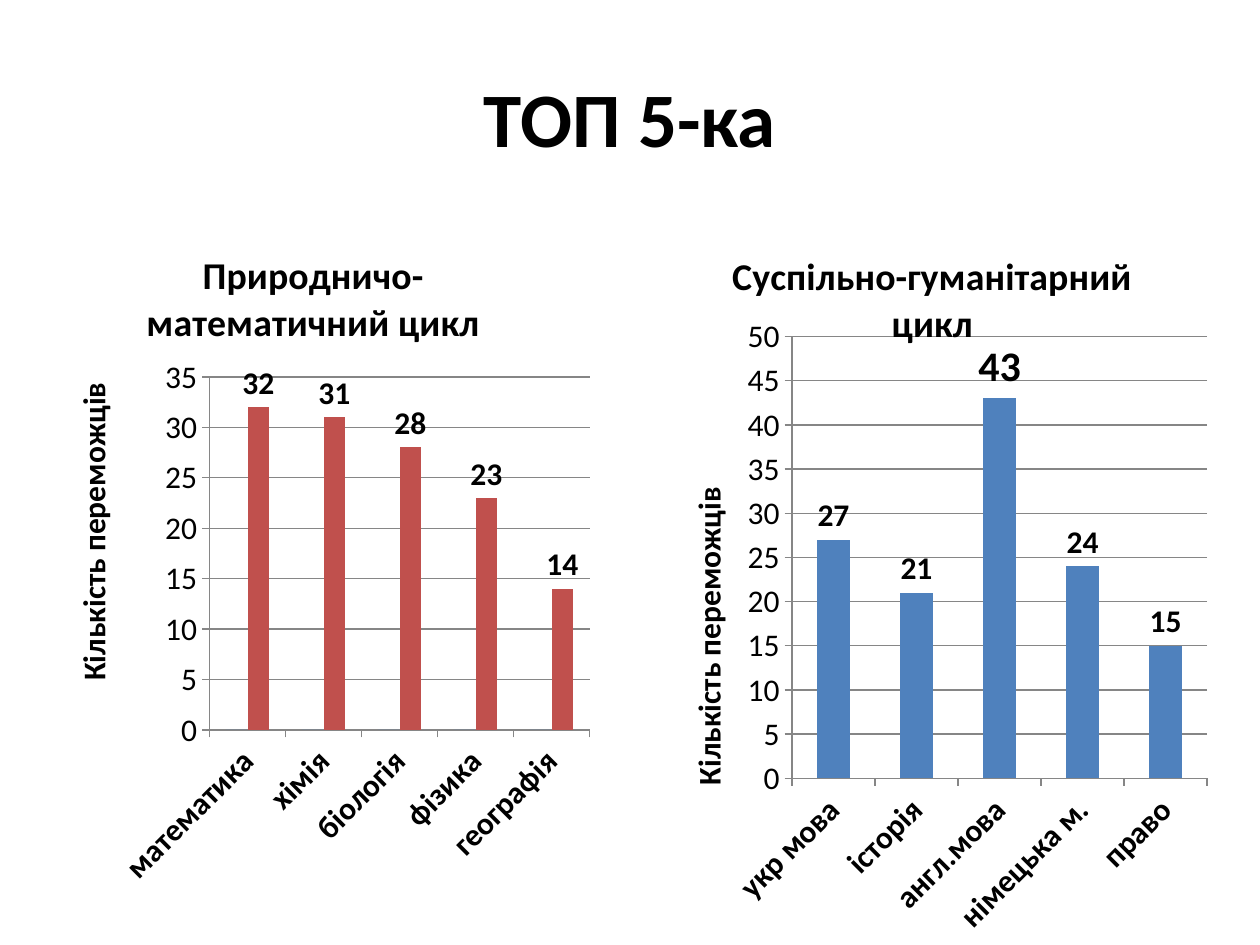
from lxml import etree
from pptx import Presentation
from pptx import util as u
from pptx.chart.data import CategoryChartData
from pptx.dml.color import RGBColor
from pptx.enum import chart as ch, text
from pptx.oxml.ns import qn

TITLE = "ТОП 5-ка"
AXIS_TITLE = "Кількість переможців"
BLUE, RED, BLACK, GREY = "4F81BD", "C0504D", "000000", "868686"
CHARTS = [
    dict(title="Природничо-математичний цикл",
         box=(0.51, 4.45, 11.61, 13.69),
         plot=(0.32, 0.23, 0.66, 0.52), axis_title=(0.07, 0.23),
         cats=["математика", "хімія", "біологія", "фізика", "географія"],
         series=[("Series 1", [0] * 5, BLUE, False),
                 ("Series 2", [32, 31, 28, 23, 14], RED, True)],
         big={}),
    dict(title="Суспільно-гуманітарний цикл",
         box=(12.9, 4.45, 11.79, 14.6),
         plot=(0.26, 0.16, 0.71, 0.61), axis_title=(0.07, 0.36),
         cats=["укр мова", "історія", "англ.мова", "німецька м.", "право"],
         series=[("Series 1", [27, 21, 43, 24, 15], BLUE, True)],
         big={2: 24}),
]


def rgb(code):
    return RGBColor.from_string(code)


def style(font, size, bold=True):
    for name, value in dict(name="Calibri", size=u.Pt(size), bold=bold).items():
        setattr(font, name, value)
    font.color.rgb = rgb(BLACK)


def write(frame, words, size):
    frame.text = words
    style(frame.paragraphs[0].runs[0].font, size)


def place(parent, values, inner=False):
    layout = parent.find(qn("c:layout"))
    if layout is None:
        layout = etree.Element(qn("c:layout"))
        parent.insert(0, layout)
    manual = etree.SubElement(layout, qn("c:manualLayout"))
    pairs = [("layoutTarget", "inner")] if inner else []
    pairs += [("xMode", "edge"), ("yMode", "edge")]
    pairs += zip("xywh", values)
    for tag, value in pairs:
        etree.SubElement(manual, qn("c:" + tag)).set("val", str(value))


def add_columns(s, item):
    data = CategoryChartData()
    data.categories = item["cats"]
    for name, values, *_ in item["series"]:
        data.add_series(name, values)
    box = [u.Cm(v) for v in item["box"]]
    chart = s.shapes.add_chart(ch.XL_CHART_TYPE.COLUMN_CLUSTERED, *box, data).chart
    style(chart.font, 18, False)
    chart.has_legend = False
    write(chart.chart_title.text_frame, item["title"], 21.6)
    chart.chart_title.include_in_layout = False

    plot = chart.plots[0]
    plot.gap_width, plot.overlap, plot.vary_by_categories = 150, 0, False
    place(chart._chartSpace.chart.plotArea, item["plot"], inner=True)

    cat, val = chart.category_axis, chart.value_axis
    for axis in (cat, val):
        style(axis.tick_labels.font, 18, axis is cat)
        axis.major_tick_mark = ch.XL_TICK_MARK.OUTSIDE
        axis.format.line.color.rgb = rgb(GREY)
    val.has_major_gridlines = True
    val.major_gridlines.format.line.color.rgb = rgb(GREY)
    write(val.axis_title.text_frame, AXIS_TITLE, 18)
    val.axis_title.text_frame._txBody.bodyPr.set("rot", "-5400000")
    place(val.axis_title._element, item["axis_title"])

    for ser, (_, _, color, labelled) in zip(plot.series, item["series"]):
        ser.format.fill.solid()
        ser.format.fill.fore_color.rgb = rgb(color)
        if labelled:
            labels = ser.data_labels
            labels.show_value = True
            labels.position = ch.XL_LABEL_POSITION.OUTSIDE_END
            style(labels.font, 18)
            for i, size in item["big"].items():
                label = ser.points[i].data_label
                style(label.font, size)
                label.position = ch.XL_LABEL_POSITION.OUTSIDE_END


prs = Presentation()
prs.slide_width, prs.slide_height = u.Cm(25.4), u.Cm(19.05)
s = prs.slides.add_slide(prs.slide_layouts[5])
sp = s.shapes.title
box = dict(left=1.27, top=0.76, width=22.86, height=3.18)
for name, value in box.items():
    setattr(sp, name, u.Cm(value))
write(sp.text_frame, TITLE, 44)
sp.text_frame.vertical_anchor = text.MSO_ANCHOR.MIDDLE
sp.text_frame.paragraphs[0].alignment = text.PP_ALIGN.CENTER
for item in CHARTS:
    add_columns(s, item)
prs.save("out.pptx")
